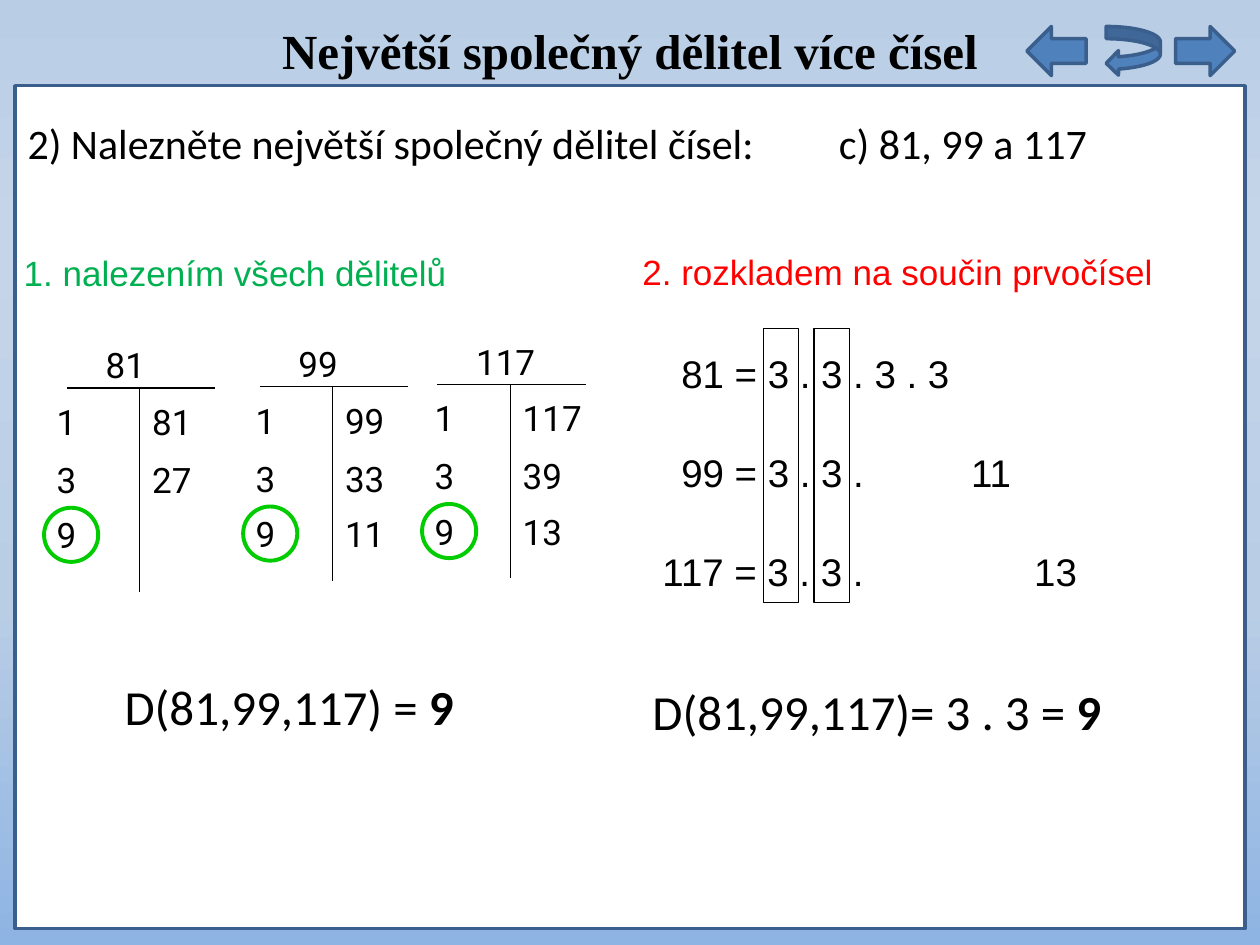
import copy
import pptx
import pptx.util
import pptx.dml.color
import pptx.enum.shapes
import pptx.enum.text
import pptx.oxml
import pptx.oxml.ns

RGB = pptx.dml.color.RGBColor
KIND = pptx.enum.shapes.MSO_SHAPE
ANCHOR = pptx.enum.text.MSO_ANCHOR
ALIGN = pptx.enum.text.PP_ALIGN
FIT = pptx.enum.text.MSO_AUTO_SIZE
qn = pptx.oxml.ns.qn
inch = pptx.util.Inches

BLACK = RGB(0, 0, 0)
WHITE = RGB(255, 255, 255)
BLUE = RGB(0x4F, 0x81, 0xBD)
NAVY = RGB(0x3A, 0x5F, 0x8C)
GREEN = RGB(0, 0xB0, 0x50)
LIME = RGB(0, 0xCC, 0)
RED = RGB(255, 0, 0)
SKY = [(0, RGB(0xB9, 0xCD, 0xE5)), (0.25, RGB(0xC5, 0xD5, 0xE9)),
       (0.64, RGB(0xB9, 0xCD, 0xE5)), (1, RGB(0x8E, 0xB4, 0xE3))]

# Content
TITLE = "Největší společný dělitel více čísel"
TASK = "2) Nalezněte největší společný dělitel čísel:\tc) 81, 99 a 117"
HEADS = [("1. nalezením všech dělitelů", GREEN, 0.09, 1.95),
         ("2. rozkladem na součin prvočísel", RED, 5, 1.94)]
# Number, left edge, stem, top line, stem foot, divisor pairs
TABLES = [
    ("81", 0.35, 1.11, 3.08, 4.7, [("1", "81"), ("3", "27"), ("9", "")]),
    ("99", 1.93, 2.64, 3.07, 4.61, [("1", "99"), ("3", "33"), ("9", "11")]),
    ("117", 3.35, 4.05, 3.05, 4.59, [("1", "117"), ("3", "39"), ("9", "13")]),
]
ROWS = [0.05, 0.51, 0.95]
# Text, left edge, tab stop
PRIMES = [("81 = 3 . 3 . 3 . 3", 5.31, None),
          ("99 = 3 . 3 .\t11", 5.31, 2.3),
          ("117 = 3 . 3 .\t13", 5.16, 2.95)]
SUMS = [("D(81,99,117) = ", 0.89, 5.21, 3.78),
        ("D(81,99,117)= 3 . 3 = ", 5.08, 5.25, 4.71)]
ARROWS = [(KIND.LEFT_ARROW, 8.15, 0.47), (KIND.CURVED_LEFT_ARROW, 8.78, 0.43),
          (KIND.RIGHT_ARROW, 9.33, 0.47)]

deck = pptx.Presentation()
deck.slide_width, deck.slide_height = inch(10), inch(7.5)
slide = deck.slides.add_slide(deck.slide_layouts[5])


def write(text, x, y, w, h=0.44, size=20, font="Roboto", color=BLACK, bold=False,
          tail="", tab=None, after=None, align=None, anchor=ANCHOR.TOP, box=None):
    """Put text in a box; the tail is a bold ending."""
    box = box or slide.shapes.add_textbox(0, 0, 0, 0)
    box.left, box.top, box.width, box.height = map(inch, (x, y, w, h))
    frame = box.text_frame
    frame.word_wrap = True
    frame.auto_size = FIT.NONE if tail else FIT.SHAPE_TO_FIT_TEXT
    frame.vertical_anchor = anchor
    para = frame.paragraphs[0]
    para.alignment = align
    if after:
        para.space_after = pptx.util.Pt(after)
    if tab:
        stops = pptx.oxml.parse_xml(
            f'<a:tabLst {pptx.oxml.ns.nsdecls("a")}><a:tab pos="{inch(tab)}" algn="l"/></a:tabLst>')
        para._p.get_or_add_pPr().append(stops)
    for part, heavy in ((text, bold), (tail, True)):
        if part:
            run = para.add_run()
            run.text = part
            run.font.size, run.font.name = pptx.util.Pt(size), font
            run.font.bold, run.font.color.rgb = heavy, color


def shape(kind, x, y, w, h, line, width, fill=None):
    part = slide.shapes.add_shape(kind, *map(inch, (x, y, w, h)))
    part.shadow.inherit = False
    if fill is None:
        part.fill.background()
    else:
        part.fill.solid()
        part.fill.fore_color.rgb = fill
    part.line.color.rgb, part.line.width = line, pptx.util.Pt(width)


def rule(x, y, to_x, to_y):
    line = slide.shapes.add_connector(
        pptx.enum.shapes.MSO_CONNECTOR.STRAIGHT, *map(inch, (x, y, to_x, to_y)))
    line.line.color.rgb, line.line.width = BLACK, pptx.util.Pt(0.75)
    props = line._element.spPr
    props.append(props.makeelement(qn("a:effectLst"), {}))


# Background
fill = slide.background.fill
fill.gradient()
fill.gradient_angle = 270
stops = slide.element.find(".//" + qn("a:gsLst"))
while len(stops) < len(SKY):
    stops.append(copy.deepcopy(stops[0]))
for stop, (pos, color) in zip(fill.gradient_stops, SKY):
    stop.position, stop.color.rgb = pos, color

# Panel, title and arrows
shape(KIND.RECTANGLE, 0.12, 0.68, 9.76, 6.69, NAVY, 2, WHITE)
write(TITLE, 0.12, 0.11, 9.76, 0.57, size=28, font="Times New Roman", bold=True,
      align=ALIGN.CENTER, box=slide.shapes.title)
for kind, x, w in ARROWS:
    shape(kind, x, 0.21, w, 0.39, NAVY, 2, BLUE)

# Task and headings
write(TASK, 0.12, 0.88, 9.92, 0.51, size=24, font="Calibri", tab=6.44)
for text, color, x, y in HEADS:
    write(text, x, y, 4.9, font="Arial", color=color, after=24)

# Divisor tables, common divisor ringed
for head, left, stem, top, foot, pairs in TABLES:
    write(head, stem - 0.37, top - 0.4, 0.71)
    rule(stem - 0.58, top, stem + 0.6, top)
    rule(stem, top, stem, foot)
    shape(KIND.OVAL, left, top + ROWS[-1], 0.43, 0.43, LIME, 2.25)
    for pair, down in zip(pairs, ROWS):
        for text, x in zip(pair, (left, stem)):
            if text:
                write(text, x, top + down, 0.71)

# Prime factors, common ones framed
for i, (text, x, tab) in enumerate(PRIMES):
    write(text, x, 2.73 + 0.785 * i, 4.2, 0.47, size=22, font="Arial", tab=tab, after=24)
for x in (6.06, 6.46):
    shape(KIND.RECTANGLE, x, 2.61, 0.28, 2.17, BLACK, 0.75)

# Results
for text, x, y, w in SUMS:
    write(text, x, y, w, 0.79, size=28, font="Calibri", tail="9", anchor=ANCHOR.MIDDLE)

deck.save("out.pptx")
